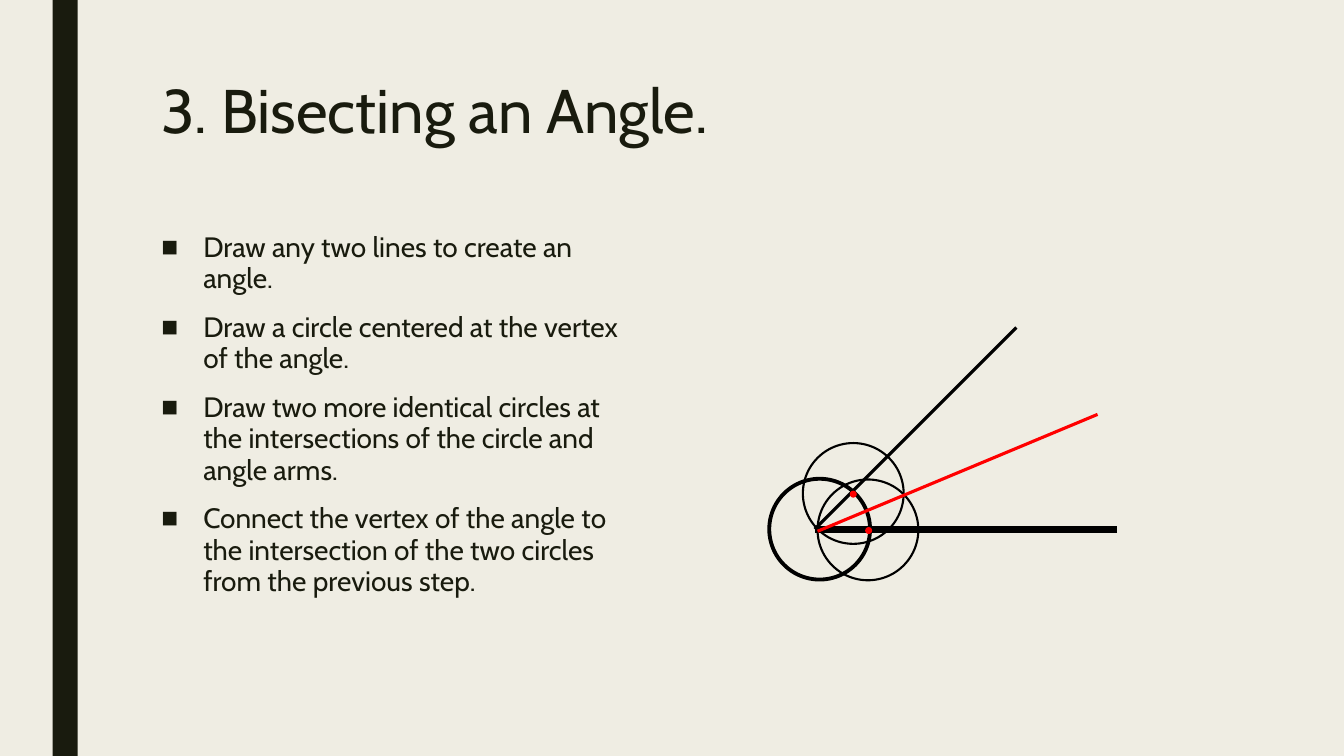
from lxml.etree import SubElement
from pptx import Presentation
from pptx.dml.color import RGBColor
from pptx.enum.shapes import MSO_CONNECTOR, MSO_SHAPE
from pptx.enum.text import MSO_ANCHOR, MSO_AUTO_SIZE, PP_ALIGN
from pptx.oxml.ns import qn
from pptx.util import Pt

COLORS = {
    "paper": RGBColor.from_string("EFEDE3"),
    "ink": RGBColor.from_string("191B0E"),
    "black": RGBColor.from_string("000000"),
    "red": RGBColor.from_string("FF0000"),
}
FONT = "Cabin"

prs = Presentation()
prs.slide_width, prs.slide_height = Pt(960), Pt(540)
s = prs.slides.add_slide(prs.slide_layouts[1])
s.background.fill.solid()
s.background.fill.fore_color.rgb = COLORS["paper"]

bar = s.shapes.add_shape(MSO_SHAPE.RECTANGLE, Pt(37.5), 0, Pt(18), Pt(540))
bar.shadow.inherit = False
bar.fill.solid()
bar.fill.fore_color.rgb = COLORS["ink"]
bar.line.fill.background()

# Title and steps
title, body = s.shapes.title, s.placeholders[1]
title.text_frame.text = "3. Bisecting an Angle."
body.text_frame.text = "\n".join([
    "Draw any two lines to create an angle.",
    "Draw a circle centered at the vertex of the angle.",
    "Draw two more identical circles at the intersections of the circle and angle arms.",
    "Connect the vertex of the angle to the intersection of the two circles from the previous step.",
])
for sp, top, width, height, size, spacing in [
    (title, 54, 756, 117, 44, 0.89),
    (body, 162, 348, 282, 20, 0.94),
]:
    sp.left, sp.top, sp.width, sp.height = Pt(108), Pt(top), Pt(width), Pt(height)
    tf = sp.text_frame
    tf.word_wrap = True
    tf.auto_size = MSO_AUTO_SIZE.NONE
    tf.vertical_anchor = MSO_ANCHOR.TOP
    for p in tf.paragraphs:
        p.alignment = PP_ALIGN.LEFT
        p.line_spacing = spacing
        for r in p.runs:
            r.font.name, r.font.size = FONT, Pt(size)
            r.font.color.rgb = COLORS["ink"]

for p in body.text_frame.paragraphs:
    p.space_before, p.space_after = Pt(10), Pt(2)
    pPr = p._p.get_or_add_pPr()
    pPr.set("marL", str(Pt(30)))
    pPr.set("indent", str(Pt(-30)))
    SubElement(pPr, qn("a:buFont")).set("typeface", "Arial")
    SubElement(pPr, qn("a:buChar")).set("char", "■")


def add_line(x1, y1, x2, y2, color, weight):
    line = s.shapes.add_connector(MSO_CONNECTOR.STRAIGHT, Pt(x1), Pt(y1), Pt(x2), Pt(y2))
    line.line.color.rgb = COLORS[color]
    line.line.width = Pt(weight)
    SubElement(line._element.spPr, qn("a:effectLst"))


def add_circle(cx, cy, diameter):
    """Add a circle around the centre (cx, cy)."""
    circle = s.shapes.add_shape(MSO_SHAPE.OVAL, Pt(cx - diameter / 2), Pt(cy - diameter / 2),
                                Pt(diameter), Pt(diameter))
    circle.shadow.inherit = False
    return circle


# Angle arms, construction circles, intersection dots, bisector
add_line(726, 234, 582, 378, "black", 2.25)
add_line(798, 378, 582, 378, "black", 5)

for cx, cy, weight in [(585.5, 378, 2.75), (609.5, 352.5, 1.5), (620, 378.5, 1.5)]:
    circle = add_circle(cx, cy, 72)
    circle.fill.background()
    circle.line.color.rgb = COLORS["black"]
    circle.line.width = Pt(weight)

for cx, cy in [(609.5, 353), (620.5, 379)]:
    dot = add_circle(cx, cy, 5)
    dot.fill.solid()
    dot.fill.fore_color.rgb = COLORS["red"]
    dot.line.fill.background()

add_line(584, 379.5, 784, 296, "red", 2.25)

prs.save("out.pptx")
